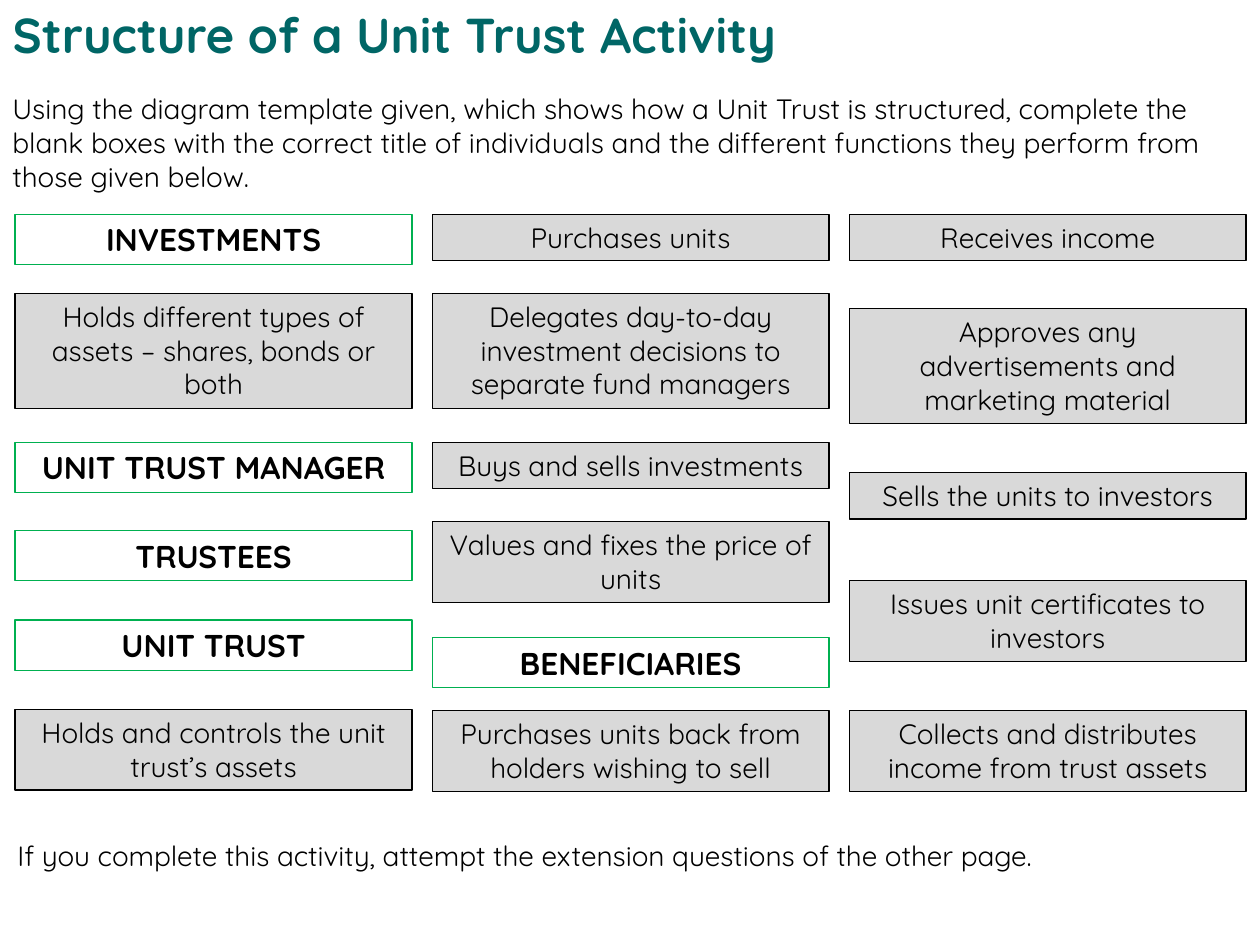
import pptx
import pptx.dml.color
import pptx.enum.shapes
import pptx.enum.text
import pptx.util
from pptx.util import Inches

TITLE = "Structure of a Unit Trust Activity"
INSTRUCTIONS = (
    "Using the diagram template given, which shows how a Unit Trust is structured, "
    "complete the blank boxes with the correct title of individuals and the different "
    "functions they perform from those given below."
)
EXTENSION = "If you complete this activity, attempt the extension questions of the other page."

# Each column lists its cards as (top, lines of text, wording); capitals mark a role.
COLUMNS = [
    [
        (1.70, 1, "INVESTMENTS"),
        (2.33, 3, "Holds different types of assets – shares, bonds or both"),
        (3.51, 1, "UNIT TRUST MANAGER"),
        (4.21, 1, "TRUSTEES"),
        (4.92, 1, "UNIT TRUST"),
        (5.63, 2, "Holds and controls the unit trust’s assets"),
    ],
    [
        (1.70, 1, "Purchases units"),
        (2.33, 3, "Delegates day-to-day investment decisions to separate fund managers"),
        (3.51, 1, "Buys and sells investments"),
        (4.14, 2, "Values and fixes the price of units"),
        (5.06, 1, "BENEFICIARIES"),
        (5.64, 2, "Purchases units back from holders wishing to sell"),
    ],
    [
        (1.70, 1, "Receives income"),
        (2.45, 3, "Approves any advertisements and marketing material"),
        (3.75, 1, "Sells the units to investors"),
        (4.61, 2, "Issues unit certificates to investors"),
        (5.64, 2, "Collects and distributes income from trust assets"),
    ],
]

FONT = "Quicksand"
TEAL, GREEN, GREY, BLACK = "006666", "00B050", "D9D9D9", "000000"
CARD_LEFT, CARD_WIDTH, COLUMN_STEP = 0.12, 3.15, 3.31
LINE_HEIGHT, CARD_PADDING, ROLE_HEIGHT = 0.27, 0.1, 0.4

ALIGN = pptx.enum.text.PP_ALIGN
ANCHOR = pptx.enum.text.MSO_ANCHOR
FIT = pptx.enum.text.MSO_AUTO_SIZE


def rgb(hex_color):
    return pptx.dml.color.RGBColor.from_string(hex_color)


def write(shape, text, size=16, color=BLACK, bold=False, align=ALIGN.LEFT,
          anchor=ANCHOR.TOP, fit=FIT.SHAPE_TO_FIT_TEXT):
    frame = shape.text_frame
    frame.word_wrap = True
    frame.auto_size = fit
    frame.vertical_anchor = anchor
    paragraph = frame.paragraphs[0]
    paragraph.alignment = align
    run = paragraph.add_run()
    run.text = text
    run.font.name = FONT
    run.font.size = pptx.util.Pt(size)
    run.font.bold = bold
    run.font.color.rgb = rgb(color)


def add_card(slide, column, top, lines, wording):
    is_role = wording.isupper()
    height = ROLE_HEIGHT if is_role else CARD_PADDING + lines * LINE_HEIGHT
    card = slide.shapes.add_shape(
        pptx.enum.shapes.MSO_SHAPE.RECTANGLE,
        Inches(CARD_LEFT + column * COLUMN_STEP), Inches(top),
        Inches(CARD_WIDTH), Inches(height))
    card.shadow.inherit = False
    card.line.width = pptx.util.Pt(0.75)
    card.line.color.rgb = rgb(GREEN if is_role else BLACK)
    if is_role:
        card.fill.background()
    else:
        card.fill.solid()
        card.fill.fore_color.rgb = rgb(GREY)
    write(card, wording, size=18 if is_role else 16, bold=is_role, align=ALIGN.CENTER)


def main():
    deck = pptx.Presentation()
    deck.slide_width, deck.slide_height = Inches(10), Inches(7.5)
    slide = deck.slides.add_slide(deck.slide_layouts.get_by_name("Title Only"))

    title = slide.shapes.title
    title.left, title.top = Inches(0), Inches(0)
    title.width, title.height = Inches(7.48), Inches(0.54)
    write(title, TITLE, size=28, color=TEAL, bold=True, anchor=ANCHOR.MIDDLE, fit=FIT.NONE)

    instructions = slide.shapes.add_textbox(Inches(0), Inches(0.68), Inches(9.96), Inches(0.91))
    write(instructions, INSTRUCTIONS)

    for column, cards in enumerate(COLUMNS):
        for top, lines, wording in cards:
            add_card(slide, column, top, lines, wording)

    extension = slide.shapes.add_textbox(Inches(0.04), Inches(6.61), Inches(9.96), Inches(0.37))
    write(extension, EXTENSION)

    deck.save("out.pptx")


if __name__ == "__main__":
    main()
